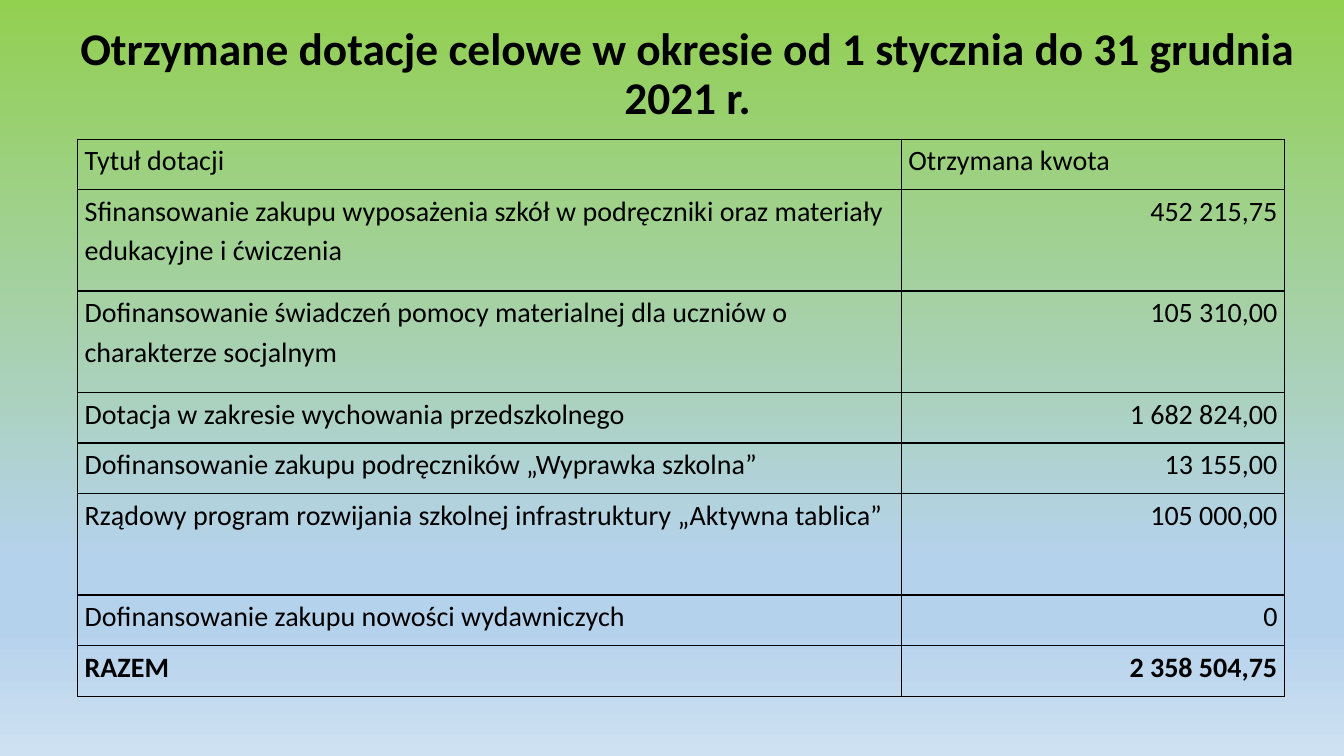
from lxml import etree
from pptx import Presentation
from pptx import util as u
from pptx.dml.color import RGBColor
from pptx.enum import text
from pptx.oxml.ns import qn

TITLE = "Otrzymane dotacje celowe w okresie od 1 stycznia do 31 grudnia 2021 r."
GRANTS = [
    ("Tytuł dotacji", "Otrzymana kwota", 1),
    ("Sfinansowanie zakupu wyposażenia szkół w podręczniki oraz materiały edukacyjne i ćwiczenia", "452 215,75", 2),
    ("Dofinansowanie świadczeń pomocy materialnej dla uczniów o charakterze socjalnym", "105 310,00", 2),
    ("Dotacja w zakresie wychowania przedszkolnego", "1 682 824,00", 1),
    ("Dofinansowanie zakupu podręczników „Wyprawka szkolna”", "13 155,00", 1),
    ("Rządowy program rozwijania szkolnej infrastruktury „Aktywna tablica”", "105 000,00", 2),
    ("Dofinansowanie zakupu nowości wydawniczych", "0", 1),
    ("RAZEM", "2 358 504,75", 1),
]
THEME = {
    "font": "Calibri",
    "ink": "000000",
    "title_size": 32.4,
    "table_size": 20,
    "border": 1,
    "sky": [(0, "92D050"), (74, "B5D2EC"), (83, "B5D2EC"), (100, "CEE1F2")],
}
TITLE_BOX = (0.31, 0.16, 13.02, 1.68)
TABLE_BOX = (0.77, 1.38, 11.97, 5.53)
COLUMNS = (8.17, 3.8)


def add_color(parent, color):
    etree.SubElement(parent, qn("a:srgbClr"), val=color)


def paint_background(page):
    fill = page.background.fill
    fill.gradient()
    fill.gradient_angle = 270
    stops = page.element.find(".//" + qn("a:gsLst"))
    for stop in list(stops):
        stops.remove(stop)
    for percent, color in THEME["sky"]:
        add_color(etree.SubElement(stops, qn("a:gs"), pos=str(percent * 1000)), color)


def style_paragraph(para, size, bold, align, spacing):
    para.alignment = align
    para.line_spacing = spacing
    for span in para.runs:
        span.font.name = THEME["font"]
        span.font.size = u.Pt(size)
        span.font.bold = bold
        span.font.color.rgb = RGBColor.from_string(THEME["ink"])


def draw_borders(cell):
    properties = cell._tc.get_or_add_tcPr()
    for index, side in enumerate(("a:lnL", "a:lnR", "a:lnT", "a:lnB")):
        line = etree.Element(qn(side), w=str(u.Pt(THEME["border"])))
        add_color(etree.SubElement(line, qn("a:solidFill")), THEME["ink"])
        properties.insert(index, line)


def add_title(page):
    box = page.shapes.add_textbox(*map(u.Inches, TITLE_BOX))
    frame = box.text_frame
    frame.word_wrap = True
    frame.vertical_anchor = text.MSO_ANCHOR.TOP
    frame.margin_top = u.Inches(0.1)
    frame.text = TITLE
    style_paragraph(frame.paragraphs[0], THEME["title_size"], True, text.PP_ALIGN.CENTER, 0.9)


def add_grants(page):
    table = page.shapes.add_table(len(GRANTS), len(COLUMNS), *map(u.Inches, TABLE_BOX)).table
    table.first_row = table.horz_banding = False
    for column, width in zip(table.columns, COLUMNS):
        column.width = u.Inches(width)
    unit = TABLE_BOX[3] / sum(lines for _, _, lines in GRANTS)
    last = len(GRANTS) - 1
    for r, (name, amount, lines) in enumerate(GRANTS):
        table.rows[r].height = u.Inches(unit * lines)
        for c, words in enumerate((name, amount)):
            cell = table.cell(r, c)
            cell.text = words
            cell.margin_left = cell.margin_right = u.Inches(0.07)
            cell.margin_top = cell.margin_bottom = 0
            cell.fill.background()
            draw_borders(cell)
            align = text.PP_ALIGN.RIGHT if r and c else text.PP_ALIGN.LEFT
            para = cell.text_frame.paragraphs[0]
            style_paragraph(para, THEME["table_size"], r == last, align, 1.15)
            para.space_after = u.Pt(10)


def main():
    deck = Presentation()
    deck.slide_width, deck.slide_height = u.Inches(13.33), u.Inches(7.5)
    page = deck.slides.add_slide(deck.slide_layouts[6])
    paint_background(page)
    add_title(page)
    add_grants(page)
    deck.save("out.pptx")


if __name__ == "__main__":
    main()
